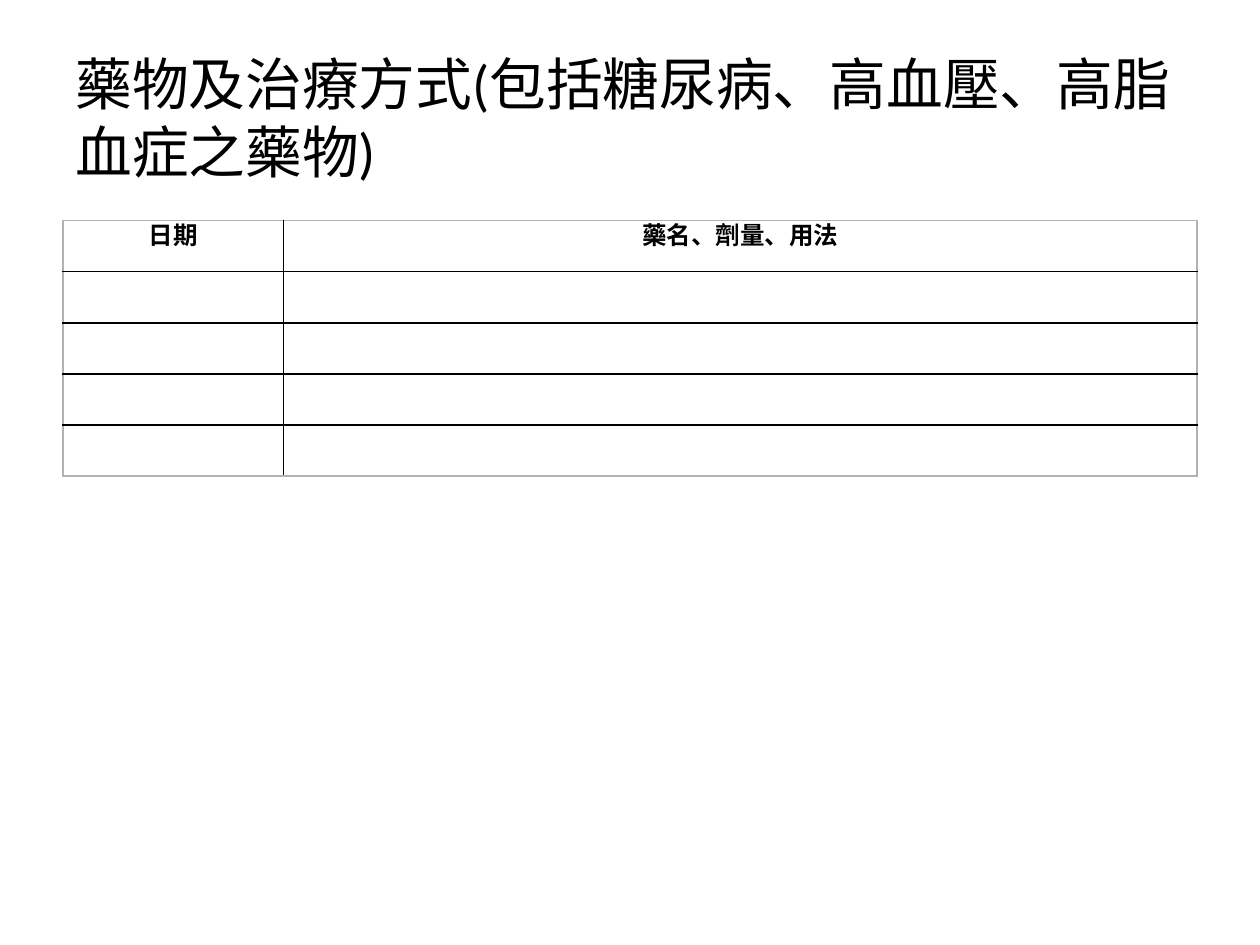
"""Build a medication record slide with a title and a blank log table."""
from lxml import etree
from pptx import Presentation
from pptx.dml.color import RGBColor
from pptx.enum.text import MSO_ANCHOR, PP_ALIGN
from pptx.oxml.ns import qn
from pptx.util import Inches, Pt

MIDDLE, CENTER = MSO_ANCHOR.MIDDLE, PP_ALIGN.CENTER

TITLE = "藥物及治療方式(包括糖尿病、高血壓、高脂血症之藥物)"
HEADERS = ["日期", "藥名、劑量、用法"]
BLANK_ROWS = 4
BLACK, GRAY = "000000", "B2B2B2"
TITLE_FORMAT = {"name": "Calibri", "size": Pt(32.4), "bold": False}
HEADER_FORMAT = {"name": "Arial", "size": Pt(14), "bold": True}

WIDTH, HEIGHT = Inches(10), Inches(7.5)
LEFT, CONTENT_WIDTH = int(WIDTH * 0.05), int(WIDTH * 0.9)
TITLE_TOP, TITLE_HEIGHT = int(HEIGHT * 0.04), Inches(1.25)
TABLE_TOP, ROW_HEIGHT = Inches(1.75), Inches(0.406)
COLUMN_WIDTHS = [Inches(1.75), Inches(7.25)]


def color(value):
    return RGBColor.from_string(value)


def write(para, text, formats):
    span = para.add_run()
    span.text = text
    span.font.color.rgb = color(BLACK)
    for name, value in formats.items():
        setattr(span.font, name, value)


def add_borders(cell, edges):
    properties = cell._tc.get_or_add_tcPr()
    for index, (side, value) in enumerate(edges.items()):
        line = etree.Element(qn(f"a:ln{side}"), w=str(Pt(1)))
        fill = etree.SubElement(line, qn("a:solidFill"))
        etree.SubElement(fill, qn("a:srgbClr"), val=value)
        properties.insert(index, line)


def add_title(page):
    box = page.shapes.add_textbox(LEFT, TITLE_TOP, CONTENT_WIDTH, TITLE_HEIGHT)
    frame = box.text_frame
    frame.word_wrap = True
    frame.vertical_anchor = MIDDLE
    write(frame.paragraphs[0], TITLE, TITLE_FORMAT)


def add_log(page):
    rows, columns = BLANK_ROWS + 1, len(HEADERS)
    table = page.shapes.add_table(
        rows, columns, LEFT, TABLE_TOP, CONTENT_WIDTH, ROW_HEIGHT * rows
    ).table
    for column, width in zip(table.columns, COLUMN_WIDTHS):
        column.width = width
    for r, row in enumerate(table.rows):
        row.height = ROW_HEIGHT
        for c, cell in enumerate(row.cells):
            cell.fill.background()
            cell.margin_left = cell.margin_right = Inches(0.02)
            cell.margin_top = cell.margin_bottom = 0
            outer = {"L": c == 0, "R": c == columns - 1, "T": r == 0, "B": r == rows - 1}
            add_borders(cell, {side: GRAY if edge else BLACK for side, edge in outer.items()})
    for cell, text in zip(table.rows[0].cells, HEADERS):
        para = cell.text_frame.paragraphs[0]
        para.alignment = CENTER
        para.line_spacing = Pt(18)
        write(para, text, HEADER_FORMAT)


def main():
    deck = Presentation()
    deck.slide_width, deck.slide_height = WIDTH, HEIGHT
    page = deck.slides.add_slide(deck.slide_layouts[6])
    add_title(page)
    add_log(page)
    deck.save("out.pptx")


if __name__ == "__main__":
    main()
